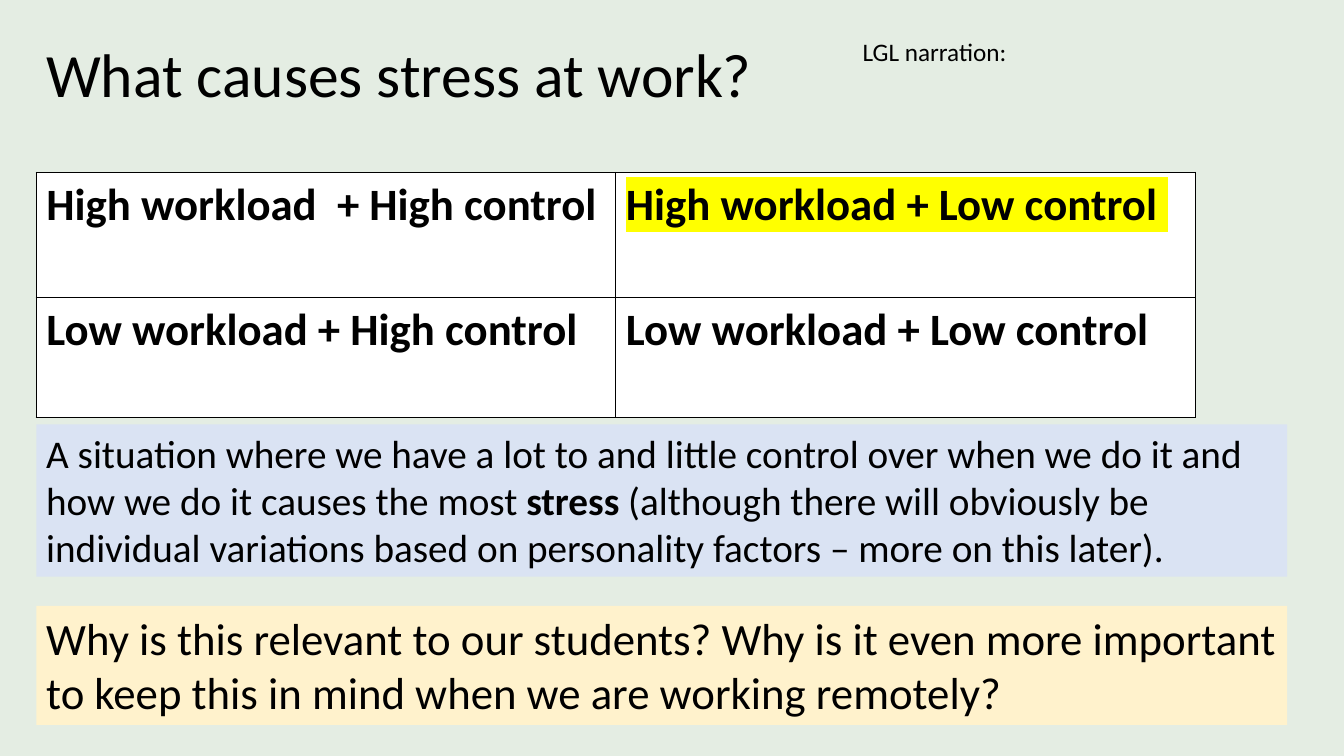
from dataclasses import dataclass
from typing import Any

from lxml import etree
from pptx import Presentation
from pptx import util as u
from pptx.dml import color as c
from pptx.enum import shapes, text
from pptx.oxml import ns

BLACK = "000000"
WHITE = "FFFFFF"
YELLOW = "FFFF00"
LEFT = 25.9
TABLE_WIDTH = 828
PANEL_WIDTH = 893.5
ROW_HEIGHTS = (89.3, 85.7)


@dataclass(frozen=True)
class Run:
    words: str
    bold: bool = False
    highlight: str | None = None


@dataclass(frozen=True)
class Block:
    left: float
    top: float
    width: float
    height: float
    size: float
    runs: tuple[Run, ...]
    fill: str | None = None
    anchor: text.MSO_ANCHOR = text.MSO_ANCHOR.TOP
    line_spacing: float = 1.0


TITLE = Block(LEFT, 2.9, TABLE_WIDTH, 104.4, 44, (Run("What causes stress at work?"),),
              anchor=text.MSO_ANCHOR.MIDDLE, line_spacing=0.9)
EXPLANATION = Block(LEFT, 303.1, PANEL_WIDTH, 108.7, 28, (
    Run("A situation where we have a lot to and little control over when we do it "
        "and how we do it causes the most "),
    Run("stress ", bold=True),
    Run("(although there will obviously be individual variations based on "
        "personality factors – more on this later)."),
), fill="DAE3F3")
QUESTION = Block(LEFT, 432.7, PANEL_WIDTH, 85, 32, (
    Run("Why is this relevant to our students? Why is it even more important to "
        "keep this in mind when we are working remotely?"),
), fill="FFF2CC")
NARRATION = Block(609.1, 22.3, 193.7, 28.8, 18, (Run("LGL narration:"),))

WORKLOAD_GRID = (
    (Run("High workload  + High control", True),
     Run("High workload + Low control ", True, YELLOW)),
    (Run("Low workload + High control", True),
     Run("Low workload + Low control", True)),
)


def rgb(value: str) -> c.RGBColor:
    return c.RGBColor.from_string(value)


def apply_format(target: Any, values: dict[str, Any]) -> None:
    for name, value in values.items():
        setattr(target, name, value)


def paint(fill: Any, value: str) -> None:
    fill.solid()
    fill.fore_color.rgb = rgb(value)


def add_color(parent: Any, value: str) -> None:
    etree.SubElement(parent, ns.qn("a:srgbClr"), val=str(rgb(value)))


def write_runs(paragraph: Any, runs: tuple[Run, ...], size: float) -> None:
    for item in runs:
        run = paragraph.add_run()
        run.text = item.words
        apply_format(run.font, {"name": "Calibri", "size": u.Pt(size), "bold": item.bold})
        paint(run.font.fill, BLACK)
        if item.highlight:
            highlight = etree.Element(ns.qn("a:highlight"))
            add_color(highlight, item.highlight)
            run.font._element.find(ns.qn("a:solidFill")).addnext(highlight)


def draw_block(slide: Any, block: Block) -> None:
    bounds = [u.Pt(v) for v in (block.left, block.top, block.width, block.height)]
    if block.fill:
        shape = slide.shapes.add_shape(shapes.MSO_SHAPE.RECTANGLE, *bounds)
        shape.shadow.inherit = False
        paint(shape.fill, block.fill)
        shape.line.fill.background()
    else:
        shape = slide.shapes.add_textbox(*bounds)
    apply_format(shape.text_frame, {"word_wrap": True, "vertical_anchor": block.anchor})
    paragraph = shape.text_frame.paragraphs[0]
    apply_format(paragraph, {"alignment": text.PP_ALIGN.LEFT,
                             "line_spacing": block.line_spacing})
    write_runs(paragraph, block.runs, block.size)


def add_borders(cell: Any) -> None:
    properties = cell._tc.get_or_add_tcPr()
    for index, side in enumerate(("lnL", "lnR", "lnT", "lnB")):
        border = etree.Element(ns.qn(f"a:{side}"), w=str(u.Pt(1)))
        add_color(etree.SubElement(border, ns.qn("a:solidFill")), BLACK)
        properties.insert(index, border)


def draw_table(slide: Any) -> None:
    table = slide.shapes.add_table(
        len(WORKLOAD_GRID), len(WORKLOAD_GRID[0]),
        u.Pt(LEFT), u.Pt(123.1), u.Pt(TABLE_WIDTH), u.Pt(sum(ROW_HEIGHTS)),
    ).table
    apply_format(table, {"first_row": False, "horz_banding": False})
    for row, height, runs in zip(table.rows, ROW_HEIGHTS, WORKLOAD_GRID):
        row.height = u.Pt(height)
        for cell, run in zip(row.cells, runs):
            paint(cell.fill, WHITE)
            add_borders(cell)
            write_runs(cell.text_frame.paragraphs[0], (run,), 32)


def main() -> None:
    presentation = Presentation()
    apply_format(presentation, {"slide_width": u.Pt(960), "slide_height": u.Pt(540)})
    slide = presentation.slides.add_slide(presentation.slide_layouts[6])
    paint(slide.background.fill, "E4EDE3")
    draw_block(slide, TITLE)
    draw_table(slide)
    for block in (EXPLANATION, QUESTION, NARRATION):
        draw_block(slide, block)
    presentation.save("out.pptx")


if __name__ == "__main__":
    main()
